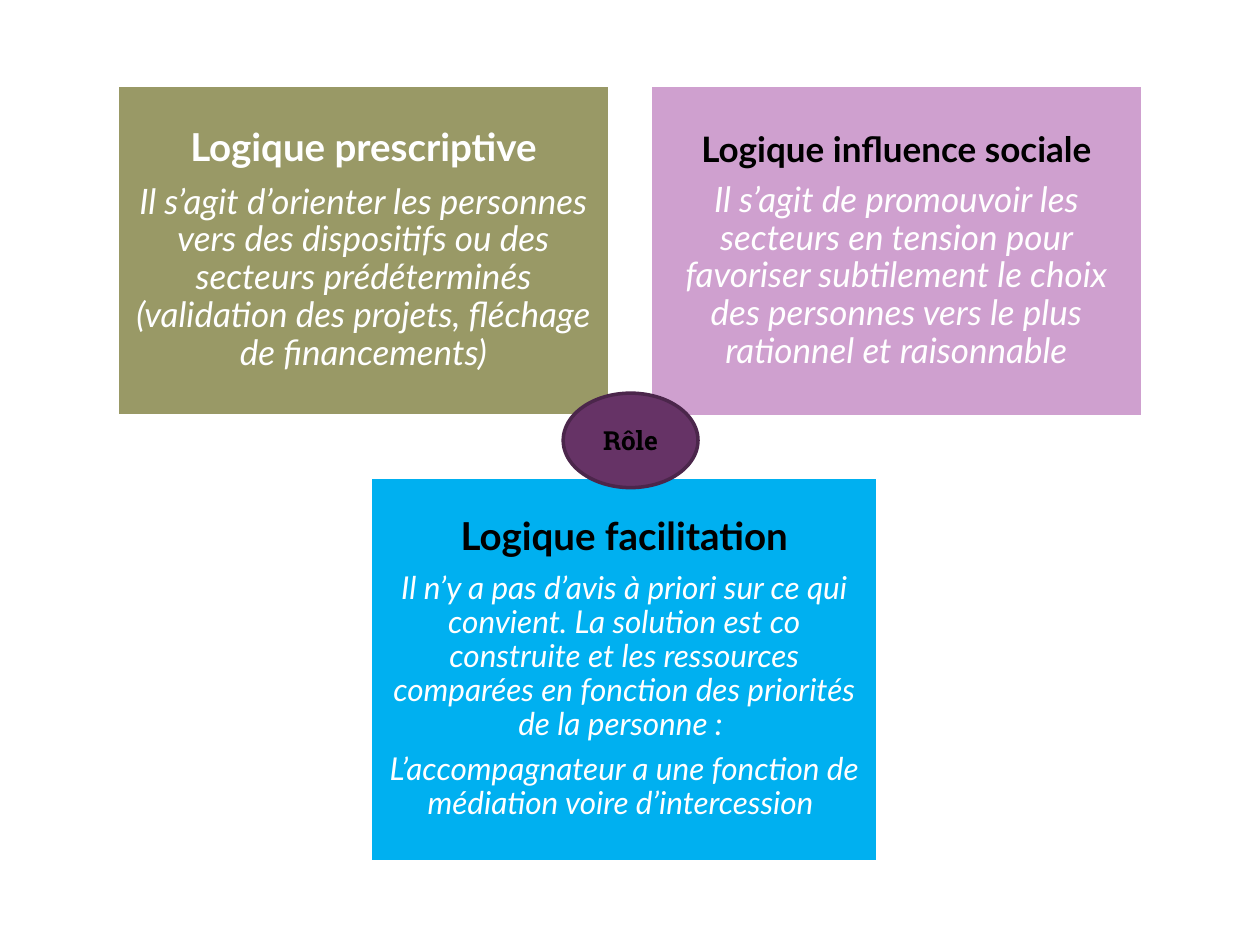
from dataclasses import dataclass

from pptx import Presentation
from pptx import util as u
from pptx.dml.color import RGBColor
from pptx.enum import shapes, text

WIDTH, HEIGHT = u.Inches(10), u.Inches(7.5)
WHITE, BLACK = "FFFFFF", "000000"
SPACE_AFTER = 0.35


@dataclass
class Para:
    words: str
    size: float
    color: str = WHITE
    heading: bool = False


@dataclass
class Box:
    left: float
    top: float
    width: float
    height: float
    fill: str
    inset: float
    paras: list[Para]


def rgb(value: str) -> RGBColor:
    return RGBColor.from_string(value)


def add_panel(s, kind, left: float, top: float, width: float, height: float,
              fill: str, line: str):
    sp = s.shapes.add_shape(kind, round(WIDTH * left / 100), round(HEIGHT * top / 100),
                            round(WIDTH * width / 100), round(HEIGHT * height / 100))
    sp.shadow.inherit = False
    sp.fill.solid()
    sp.fill.fore_color.rgb = rgb(fill)
    sp.line.color.rgb = rgb(line)
    sp.line.width = u.Pt(2)
    tf = sp.text_frame
    tf.word_wrap = True
    tf.vertical_anchor = text.MSO_ANCHOR.MIDDLE
    return tf


def add_run(p, words: str, font: str, size: float, color: str,
            bold: bool, italic: bool) -> None:
    p.alignment = text.PP_ALIGN.CENTER
    r = p.add_run()
    r.text = words
    r.font.name, r.font.size = font, u.Pt(size)
    r.font.bold, r.font.italic = bold, italic
    r.font.color.rgb = rgb(color)


def add_box(s, box: Box) -> None:
    tf = add_panel(s, shapes.MSO_SHAPE.RECTANGLE, box.left, box.top,
                   box.width, box.height, box.fill, WHITE)
    tf.margin_left = tf.margin_right = u.Inches(box.inset)
    tf.margin_top = tf.margin_bottom = u.Inches(box.inset)
    for i, para in enumerate(box.paras):
        p = tf.add_paragraph() if i else tf.paragraphs[0]
        p.line_spacing = 0.9
        p.space_after = u.Pt(SPACE_AFTER * para.size)
        add_run(p, para.words, "Lato", para.size, para.color,
                para.heading, not para.heading)


BOXES = [
    Box(9.3, 9.07, 39.1, 34.93, "999966", 0.09, [
        Para("Logique prescriptive", 22, heading=True),
        Para("Il s’agit d’orienter les personnes vers des dispositifs ou des secteurs "
             "prédéterminés (validation des projets, fléchage de financements)", 20),
    ]),
    Box(51.6, 9.07, 39.1, 35.07, "CFA0CF", 0.08, [
        Para("Logique influence sociale", 20, BLACK, True),
        Para("Il s’agit de promouvoir les secteurs en tension pour favoriser subtilement "
             "le choix des personnes vers le plus rationnel et raisonnable", 20),
    ]),
    Box(29.4, 50.53, 40.3, 40.67, "00B0F0", 0.09, [
        Para("Logique facilitation", 22, BLACK, True),
        Para("Il n’y a pas d’avis à priori sur ce qui convient. La solution est co construite "
             "et les ressources comparées en fonction des priorités de la personne : ", 18),
        Para("L’accompagnateur a une fonction de médiation voire d’intercession ", 18),
    ]),
]


def main() -> None:
    prs = Presentation()
    prs.slide_width, prs.slide_height = WIDTH, HEIGHT
    s = prs.slides.add_slide(prs.slide_layouts[6])
    for box in BOXES:
        add_box(s, box)
    role = add_panel(s, shapes.MSO_SHAPE.OVAL, 44.7, 41.6, 10.7, 10, "663366", "4B264B")
    add_run(role.paragraphs[0], "Rôle", "Roboto Slab", 15, BLACK, True, False)
    prs.save("out.pptx")


if __name__ == "__main__":
    main()
